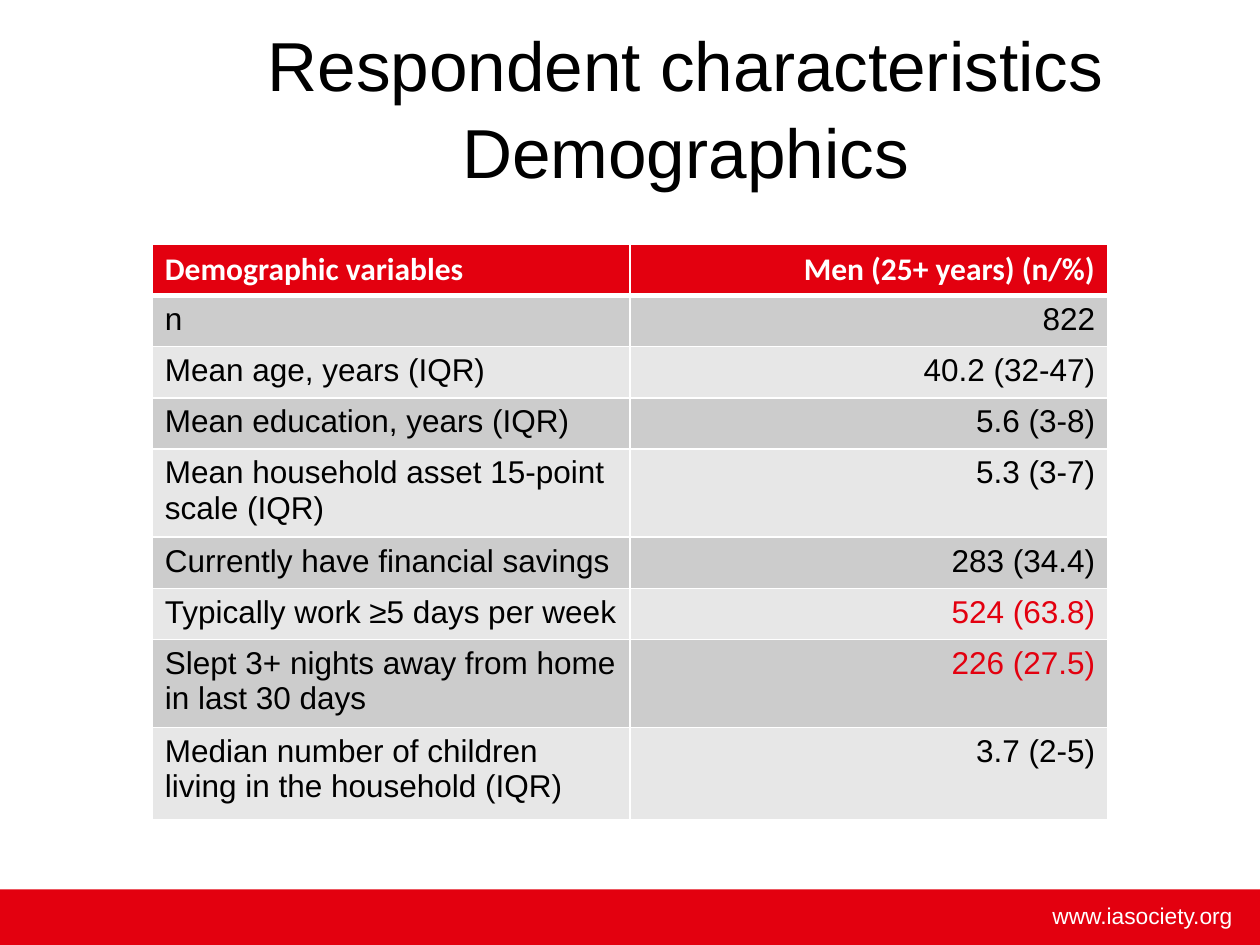
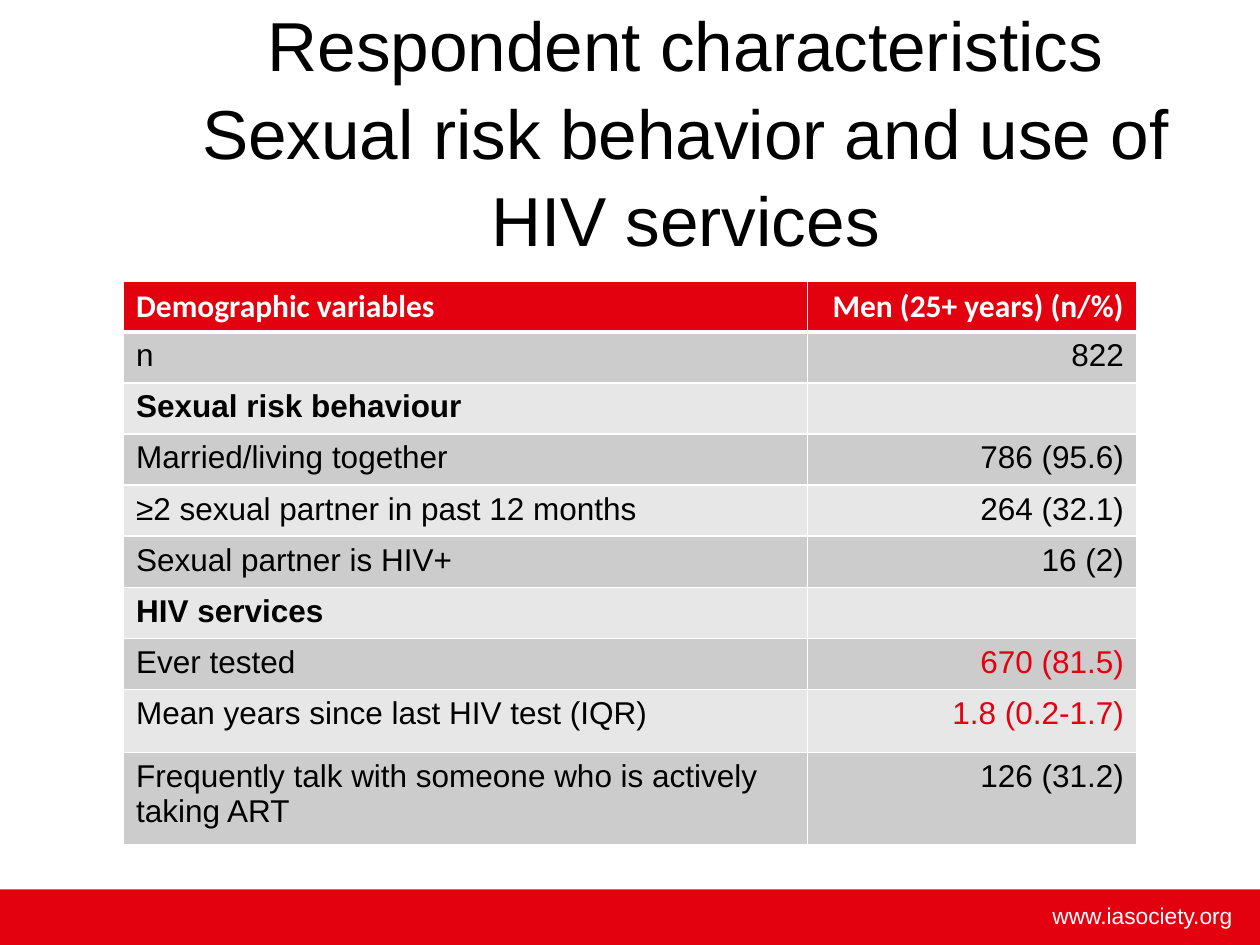
from typing import NamedTuple

from lxml.etree import SubElement
from pptx import Presentation
from pptx.dml.color import RGBColor
from pptx.enum.shapes import MSO_SHAPE
from pptx.enum.text import MSO_ANCHOR, PP_ALIGN
from pptx.oxml.ns import qn
from pptx.util import Cm, Pt

RED = RGBColor(0xE3, 0x00, 0x0F)
WHITE = RGBColor(0xFF, 0xFF, 0xFF)
BLACK = RGBColor(0x00, 0x00, 0x00)
DARK_BAND = RGBColor(0xCC, 0xCC, 0xCC)
LIGHT_BAND = RGBColor(0xE7, 0xE7, 0xE7)

SLIDE_WIDTH, SLIDE_HEIGHT = 25.4, 19.05
ROW_HEIGHT = 1.03
LAST_ROW_HEIGHT = 1.85


class Row(NamedTuple):
    """One table line; a line without a value is a group heading."""

    label: str
    value: str = ""
    highlight: bool = False


HEADER = Row("Demographic variables", "Men (25+ years) (n/%)")

DEMOGRAPHICS = [
    Row("n", "822"),
    Row("Mean age, years (IQR)", "40.2 (32-47)"),
    Row("Mean education, years (IQR)", "5.6 (3-8)"),
    Row("Mean household asset 15-point scale (IQR)", "5.3 (3-7)"),
    Row("Currently have financial savings", "283 (34.4)"),
    Row("Typically work ≥5 days per week", "524 (63.8)", True),
    Row("Slept 3+ nights away from home in last 30 days", "226 (27.5)", True),
    Row("Median number of children living in the household (IQR)", "3.7 (2-5)"),
]

RISK_AND_SERVICES = [
    Row("n", "822"),
    Row("Sexual risk behaviour"),
    Row("Married/living together", "786 (95.6)"),
    Row("≥2 sexual partner in past 12 months", "264 (32.1)"),
    Row("Sexual partner is HIV+", "16 (2)"),
    Row("HIV services"),
    Row("Ever tested", "670 (81.5)", True),
    Row("Mean years since last HIV test (IQR)", "1.8 (0.2-1.7)", True),
    Row("Frequently talk with someone who is actively taking ART", "126 (31.2)"),
]


class SlideBuilder:
    """Holds the shared style and the slide being built."""

    def __init__(self):
        """Open an empty deck of the right size."""
        self.deck = Presentation()
        self.deck.slide_width = Cm(SLIDE_WIDTH)
        self.deck.slide_height = Cm(SLIDE_HEIGHT)
        self.page = None

    def new_page(self, title, title_top):
        """Start a slide with its footer and title."""
        self.page = self.deck.slides.add_slide(self.deck.slide_layouts[6])
        self.footer()
        self.title(title, title_top)

    def span(self, para, text, size, color, font="Arial", bold=False):
        """Add one styled run to a paragraph."""
        span = para.add_run()
        span.text = text
        span.font.name = font
        span.font.size = Pt(size)
        span.font.bold = bold
        span.font.color.rgb = color

    def text_box(self, left, top, width, height, align, anchor):
        """Add an empty wrapping text box and return its first paragraph."""
        box = self.page.shapes.add_textbox(Cm(left), Cm(top), Cm(width), Cm(height))
        box.text_frame.word_wrap = True
        box.text_frame.vertical_anchor = anchor
        para = box.text_frame.paragraphs[0]
        para.alignment = align
        return para

    def footer(self):
        """Draw the red band with the web address."""
        height = 1.12
        band = self.page.shapes.add_shape(
            MSO_SHAPE.RECTANGLE, 0, Cm(SLIDE_HEIGHT - height), Cm(SLIDE_WIDTH), Cm(height))
        band.shadow.inherit = False
        band.fill.solid()
        band.fill.fore_color.rgb = RED
        band.line.fill.background()
        para = self.text_box(16.69, 18.06, 8.4, 0.81, PP_ALIGN.RIGHT, MSO_ANCHOR.TOP)
        self.span(para, "www.iasociety.org", 13, WHITE)

    def title(self, lines, top):
        """Write the centred title, one line break between its lines."""
        para = self.text_box(3.51, top, 20.62, 3.18, PP_ALIGN.CENTER, MSO_ANCHOR.MIDDLE)
        para.line_spacing = 1.05
        for index, line in enumerate(lines):
            if index:
                para.add_line_break()
            self.span(para, line, 39.6, BLACK)

    def borders(self, cell, top, bottom):
        """Give a cell white borders; top and bottom widths are in points."""
        properties = cell._tc.get_or_add_tcPr()
        for side, width in (("L", 1), ("R", 1), ("T", top), ("B", bottom)):
            line = SubElement(properties, qn(f"a:ln{side}"), w=str(Pt(width)))
            fill = SubElement(line, qn("a:solidFill"))
            SubElement(fill, qn("a:srgbClr"), val=str(WHITE))

    def cell(self, cell, text, fill, align, **style):
        """Fill a table cell and write its text."""
        cell.fill.solid()
        cell.fill.fore_color.rgb = fill
        para = cell.text_frame.paragraphs[0]
        para.alignment = align
        if text:
            self.span(para, text, 18, **style)

    def table(self, left, top, widths, rows, heights):
        """Draw a banded two-column table under the common header."""
        lines = [HEADER, *rows]
        frame = self.page.shapes.add_table(
            len(lines), 2, Cm(left), Cm(top), Cm(sum(widths)), Cm(sum(heights)))
        table = frame.table
        table.horz_banding = False
        for column, width in zip(table.columns, widths):
            column.width = Cm(width)
        for index, (line, height) in enumerate(zip(lines, heights)):
            table.rows[index].height = Cm(height)
            label, value = table.rows[index].cells
            for cell in (label, value):
                self.borders(cell, 3 if index == 1 else 1, 3 if index == 0 else 1)
            if index == 0:
                style = {"color": WHITE, "font": "Calibri", "bold": True}
                self.cell(label, line.label, RED, PP_ALIGN.LEFT, **style)
                self.cell(value, line.value, RED, PP_ALIGN.RIGHT, **style)
                continue
            fill = DARK_BAND if index % 2 else LIGHT_BAND
            self.cell(label, line.label, fill, PP_ALIGN.LEFT,
                      color=BLACK, bold=not line.value)
            self.cell(value, line.value, fill, PP_ALIGN.RIGHT,
                      color=RED if line.highlight else BLACK)


def main():
    """Build both slides and save the deck."""
    builder = SlideBuilder()
    builder.new_page(["Respondent characteristics", "Demographics"], 0.53)
    builder.table(3.07, 4.93, [9.63, 9.63], DEMOGRAPHICS,
                  [ROW_HEIGHT] * 8 + [LAST_ROW_HEIGHT])
    builder.new_page(["Respondent characteristics",
                      "Sexual risk behavior and use of HIV services"], 1.02)
    builder.table(2.49, 5.66, [13.79, 6.63], RISK_AND_SERVICES,
                  [ROW_HEIGHT] * 8 + [1.27, LAST_ROW_HEIGHT])
    builder.deck.save("out.pptx")


if __name__ == "__main__":
    main()
